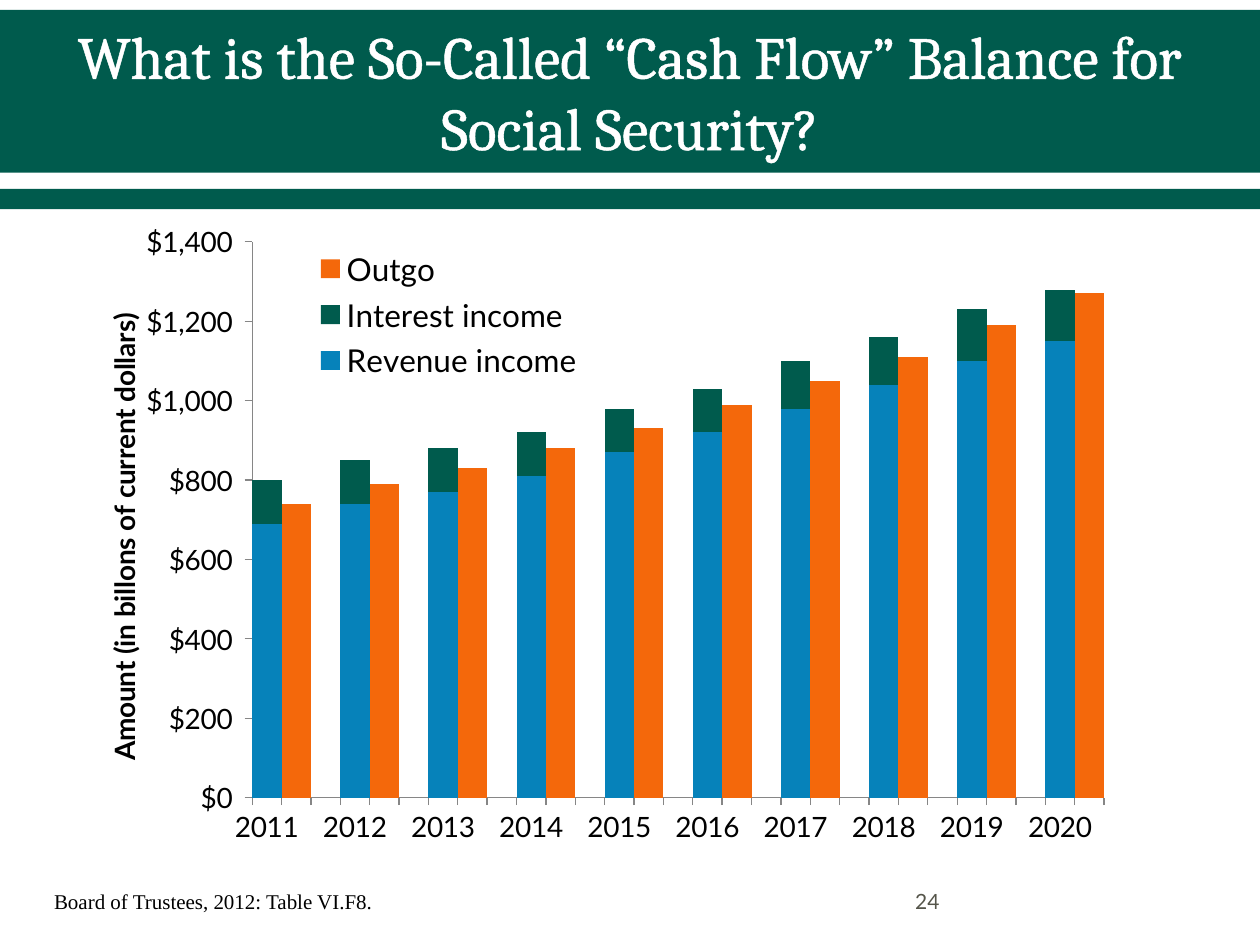
from dataclasses import dataclass

from lxml.etree import SubElement
from pptx import Presentation
from pptx.chart.data import CategoryChartData
from pptx.dml.color import RGBColor
from pptx.enum.chart import XL_CHART_TYPE, XL_LEGEND_POSITION, XL_TICK_MARK
from pptx.enum.shapes import MSO_SHAPE
from pptx.enum.text import MSO_ANCHOR, PP_ALIGN
from pptx.oxml import parse_xml
from pptx.oxml.ns import nsdecls, qn
from pptx.util import Cm, Pt


@dataclass(frozen=True)
class Theme:
    green: RGBColor = RGBColor(0x00, 0x5B, 0x4D)
    blue: RGBColor = RGBColor(0x06, 0x82, 0xBA)
    orange: RGBColor = RGBColor(0xF4, 0x68, 0x0B)
    white: RGBColor = RGBColor(0xFF, 0xFF, 0xFF)
    black: RGBColor = RGBColor(0x00, 0x00, 0x00)
    olive: RGBColor = RGBColor(0x55, 0x55, 0x4A)
    axis_gray: RGBColor = RGBColor(0x86, 0x86, 0x86)
    title_size: Pt = Pt(34)
    legend_size: Pt = Pt(18)
    axis_size: Pt = Pt(16)
    chart_size: Pt = Pt(10)
    note_size: Pt = Pt(12)
    title_font: str = "Cambria"
    chart_font: str = "Lato"
    note_font: str = "Times New Roman"


theme = Theme()


def add_text(slide, box, text, font_name, size, color, anchor, alignment, wrap):
    shape = slide.shapes.add_textbox(*[Cm(length) for length in box])
    frame = shape.text_frame
    frame.word_wrap = wrap
    frame.vertical_anchor = anchor
    paragraph = frame.paragraphs[0]
    paragraph.alignment = alignment
    run = paragraph.add_run()
    run.text = text
    run.font.name = font_name
    run.font.size = size
    run.font.color.rgb = color
    return run


def place(element, index, target=None, **fractions):
    for layout in element.findall(qn("c:layout")):
        element.remove(layout)
    layout = parse_xml(f"<c:layout {nsdecls('c')}><c:manualLayout/></c:layout>")
    manual = layout[0]
    if target:
        SubElement(manual, qn("c:layoutTarget")).set("val", target)
    for name in ("x", "y"):
        SubElement(manual, qn(f"c:{name}Mode")).set("val", "edge")
    for name, value in fractions.items():
        SubElement(manual, qn(f"c:{name}")).set("val", str(value))
    element.insert(index, layout)


presentation = Presentation()
presentation.slide_width = Cm(25.4)
presentation.slide_height = Cm(19.05)
slide = presentation.slides.add_slide(presentation.slide_layouts[6])

for top, height in ((0.2, 3.28), (3.81, 0.41)):
    band = slide.shapes.add_shape(
        MSO_SHAPE.RECTANGLE, 0, Cm(top), presentation.slide_width, Cm(height))
    band.shadow.inherit = False
    band.fill.solid()
    band.fill.fore_color.rgb = theme.green
    band.line.fill.background()

title = add_text(
    slide, (1.27, 0.28, 22.86, 3.1),
    "What is the So-Called “Cash Flow” Balance for Social Security?",
    theme.title_font, theme.title_size, theme.white,
    MSO_ANCHOR.MIDDLE, PP_ALIGN.CENTER, True)
title.font._element.insert(0, parse_xml(
    f'<a:ln {nsdecls("a")} w="{Pt(1.1)}"><a:solidFill>'
    f'<a:srgbClr val="{theme.white}"/></a:solidFill></a:ln>'))
add_text(
    slide, (0.84, 17.78, 6.99, 0.76), "Board of Trustees, 2012: Table VI.F8.",
    theme.note_font, theme.note_size, theme.black,
    MSO_ANCHOR.TOP, PP_ALIGN.LEFT, False)
add_text(
    slide, (18.2, 17.65, 5.92, 1.02), "24",
    theme.chart_font, theme.note_size, theme.olive,
    MSO_ANCHOR.MIDDLE, PP_ALIGN.LEFT, True)

years = range(2011, 2021)
revenue = (690, 740, 770, 810, 870, 920, 980, 1040, 1100, 1150)
interest = (110, 110, 110, 110, 110, 110, 120, 120, 130, 130)
outgo = (740, 790, 830, 880, 930, 990, 1050, 1110, 1190, 1270)

categories, revenue_bars, interest_bars, outgo_bars = [], [], [], []
for year, earned, credited, spent in zip(years, revenue, interest, outgo):
    categories += [str(year), "", ""]
    revenue_bars += [earned, None, None]
    interest_bars += [credited, None, None]
    outgo_bars += [None, spent, None]

chart_data = CategoryChartData()
chart_data.categories = categories[:-1]
for name, bars in (("Revenue income", revenue_bars),
                   ("Interest income", interest_bars),
                   ("Outgo", outgo_bars)):
    chart_data.add_series(name, bars[:-1])

chart = slide.shapes.add_chart(
    XL_CHART_TYPE.COLUMN_STACKED,
    Cm(2), Cm(3.81), Cm(22.02), Cm(13.34), chart_data).chart
chart.has_title = False
chart.font.name = theme.chart_font
chart.font.size = theme.chart_size
chart.font.color.rgb = theme.black

plot = chart.plots[0]
plot.vary_by_categories = False
plot.gap_width = 0
plot.overlap = 100
for series, color in zip(plot.series, (theme.blue, theme.green, theme.orange)):
    series.format.fill.solid()
    series.format.fill.fore_color.rgb = color
    series.invert_if_negative = False

for axis in (chart.category_axis, chart.value_axis):
    axis.major_tick_mark = XL_TICK_MARK.OUTSIDE
    axis.minor_tick_mark = XL_TICK_MARK.NONE
    axis.has_major_gridlines = False
    axis.format.line.color.rgb = theme.axis_gray
    axis.tick_labels.font.size = theme.axis_size

value_axis = chart.value_axis
value_axis.minimum_scale = 0
value_axis.maximum_scale = 1400
value_axis.major_unit = 200
value_axis.tick_labels.number_format = '"$"#,##0_);[Red]\\("$"#,##0\\)'
value_axis.tick_labels.number_format_is_linked = False
value_axis.has_title = True
title_frame = value_axis.axis_title.text_frame
title_frame._txBody.bodyPr.set("rot", "-5400000")
title_frame._txBody.bodyPr.set("vert", "horz")
run = title_frame.paragraphs[0].add_run()
run.text = "Amount (in billons of current dollars)"
run.font.name = theme.chart_font
run.font.size = theme.axis_size
run.font.bold = True
run.font.color.rgb = theme.black

chart.has_legend = True
legend = chart.legend
legend.position = XL_LEGEND_POSITION.RIGHT
legend.include_in_layout = False
legend.font.name = theme.chart_font
legend.font.size = theme.legend_size
legend.font.color.rgb = theme.black

place(plot._element.getparent(), 0, "inner", x=0.14, y=0.08, w=0.78, h=0.84)
place(legend._element, 1, x=0.19, y=0.08, w=0.26, h=0.22)
place(value_axis.axis_title._element, 1, x=0, y=0.18)

presentation.save("out.pptx")
